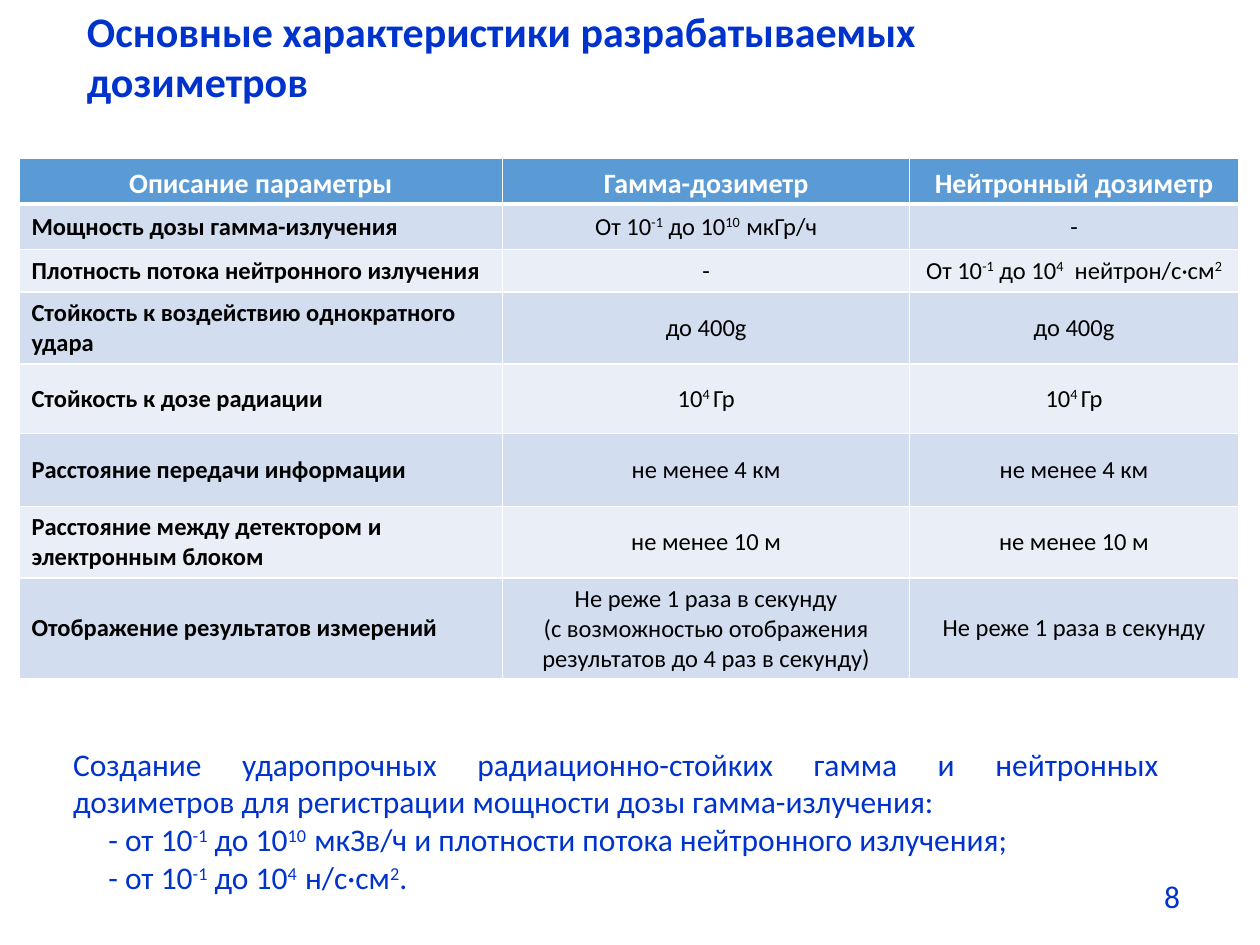
from lxml import etree
from pptx import Presentation
from pptx.dml.color import RGBColor
from pptx.enum.text import MSO_ANCHOR, MSO_AUTO_SIZE, PP_ALIGN
from pptx.oxml.ns import qn
from pptx.util import Inches, Pt

LEFT, CENTER, JUSTIFY = PP_ALIGN.LEFT, PP_ALIGN.CENTER, PP_ALIGN.JUSTIFY
TOP, MIDDLE = MSO_ANCHOR.TOP, MSO_ANCHOR.MIDDLE
NO_AUTOFIT = MSO_AUTO_SIZE.NONE
TITLE_AND_BODY = 1

BLUE, WHITE, BLACK = "0033CC", "FFFFFF", "000000"
HEADER_FILL, BAND_FILLS = "5B9BD5", ("D2DEEF", "EAEFF7")

COLUMN_WIDTHS = (3.84, 3.23, 2.61)
ROW_HEIGHTS = (0.36, 0.36, 0.34, 0.57, 0.55, 0.58, 0.56, 0.8)
ROWS = (
    ("Описание параметры", "Гамма-дозиметр", "Нейтронный дозиметр"),
    ("Мощность дозы гамма-излучения", "От 10|-1| до 10|10  |мкГр/ч", "-"),
    ("Плотность потока нейтронного излучения", "-",
     "От 10|-1| до 10|4|  нейтрон/c·см|2"),
    ("Стойкость к воздействию однократного удара", "до 400g", "до 400g"),
    ("Стойкость к дозе радиации", "10|4 |Гр", "10|4 |Гр"),
    ("Расстояние передачи информации", "не менее 4 км", "не менее 4 км"),
    ("Расстояние между детектором и электронным блоком",
     "не менее 10 м", "не менее 10 м"),
    ("Отображение результатов измерений",
     "Не реже 1 раза в секунду\n"
     "(с возможностью отображения результатов до 4 раз в секунду)",
     "Не реже 1 раза в секунду"),
)
GOALS = (
    "Создание ударопрочных радиационно-стойких гамма и нейтронных "
    "дозиметров для регистрации мощности дозы гамма-излучения:",
    "- от 10|-1| до 10|10  |мкЗв/ч и плотности потока нейтронного излучения;",
    "- от 10|-1| до 10|4  |н/c·см|2|.",
)


def color(value):
    return RGBColor.from_string(value)


class SlideBuilder:
    font = "Calibri"

    def __init__(self, slide):
        self.slide = slide

    def add_text(self, paragraph, text, size, text_color, bold=False, align=LEFT):
        paragraph.alignment = align
        for index, part in enumerate(text.split("|")):
            run = paragraph.add_run()
            run.text = part
            run.font.name = self.font
            run.font.size = Pt(size)
            run.font.bold = bold
            run.font.color.rgb = color(text_color)
            if index % 2:
                run.font._element.set("baseline", "30000")

    def place(self, shape, left, top, width, height):
        shape.left, shape.top = Inches(left), Inches(top)
        shape.width, shape.height = Inches(width), Inches(height)
        frame = shape.text_frame
        frame.auto_size = NO_AUTOFIT
        frame.word_wrap = True
        frame.vertical_anchor = TOP
        return frame

    def title(self, text, *box):
        frame = self.place(self.slide.shapes.title, *box)
        self.add_text(frame.paragraphs[0], text, 24, BLUE, bold=True)

    def body(self, lines, *box):
        frame = self.place(self.slide.placeholders[1], *box)
        for index, line in enumerate(lines):
            paragraph = frame.add_paragraph() if index else frame.paragraphs[0]
            properties = paragraph._p.get_or_add_pPr()
            properties.set("marL", str(Inches(0.28 if index else 0)))
            properties.set("indent", "0")
            etree.SubElement(properties, qn("a:buNone"))
            paragraph.space_before = Pt(0)
            self.add_text(paragraph, line, 18, BLUE,
                          align=LEFT if index else JUSTIFY)

    def page_number(self, text, *box):
        lengths = [Inches(length) for length in box]
        frame = self.slide.shapes.add_textbox(*lengths).text_frame
        self.add_text(frame.paragraphs[0], text, 18, BLUE)

    def borders(self, cell, top, bottom):
        properties = cell._tc.get_or_add_tcPr()
        widths = {"a:lnL": 1, "a:lnR": 1, "a:lnT": top, "a:lnB": bottom}
        for index, (tag, width) in enumerate(widths.items()):
            line = etree.Element(qn(tag), w=str(Pt(width)))
            fill = etree.SubElement(line, qn("a:solidFill"))
            etree.SubElement(fill, qn("a:srgbClr"), val=WHITE)
            properties.insert(index, line)

    def cell(self, cell, text, row, column):
        header = row == 0
        cell.fill.solid()
        cell.fill.fore_color.rgb = color(
            HEADER_FILL if header else BAND_FILLS[(row - 1) % 2])
        self.borders(cell, 3 if row == 1 else 1, 3 if header else 1)
        cell.vertical_anchor = MIDDLE
        cell.margin_left = cell.margin_right = Inches(0.07 if header else 0.1)
        cell.margin_top = cell.margin_bottom = Inches(0 if header else 0.05)
        frame = cell.text_frame
        for index, line in enumerate(text.split("\n")):
            paragraph = frame.add_paragraph() if index else frame.paragraphs[0]
            if header:
                paragraph.line_spacing = 1.15
            self.add_text(paragraph, line, 16 if header else 14,
                          WHITE if header else BLACK,
                          bold=header or column == 0,
                          align=CENTER if header or column else LEFT)

    def table(self, rows, left, top):
        table = self.slide.shapes.add_table(
            len(rows), len(COLUMN_WIDTHS), Inches(left), Inches(top),
            Inches(sum(COLUMN_WIDTHS)), Inches(sum(ROW_HEIGHTS))).table
        for column, width in zip(table.columns, COLUMN_WIDTHS):
            column.width = Inches(width)
        for row, height in zip(table.rows, ROW_HEIGHTS):
            row.height = Inches(height)
        for row, texts in enumerate(rows):
            for column, text in enumerate(texts):
                self.cell(table.cell(row, column), text, row, column)


def main():
    presentation = Presentation()
    presentation.slide_width = Inches(10)
    presentation.slide_height = Inches(7.5)
    layout = presentation.slide_layouts[TITLE_AND_BODY]
    builder = SlideBuilder(presentation.slides.add_slide(layout))
    builder.page_number("8", 9.14, 6.91, 0.28, 0.59)
    builder.title("Основные характеристики разрабатываемых дозиметров",
                  0.59, -0.01, 7, 0.91)
    builder.table(ROWS, 0.15, 1.26)
    builder.body(GOALS, 0.48, 5.86, 8.82, 1.31)
    presentation.save("out.pptx")


if __name__ == "__main__":
    main()
